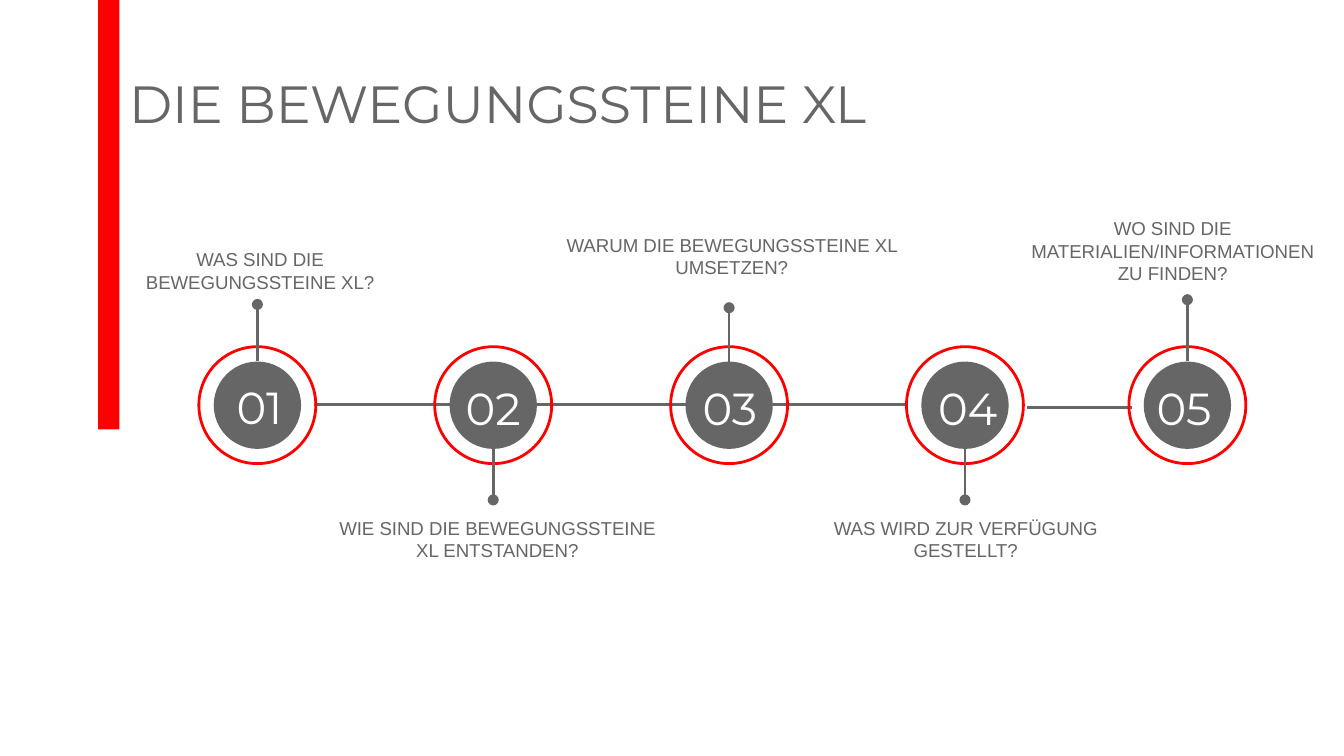
from lxml.etree import SubElement
from pptx import Presentation
from pptx.dml.color import RGBColor
from pptx.enum.shapes import MSO_CONNECTOR, MSO_SHAPE
from pptx.enum.text import MSO_ANCHOR, MSO_AUTO_SIZE, PP_ALIGN
from pptx.oxml.ns import qn
from pptx.util import Pt

PX = 4572
COLORS = {"gray": "666666", "red": "FF0000", "white": "FFFFFF"}
TITLE = "DIE BEWEGUNGSSTEINE XL"
STEPS = [
    {"number": "01", "question": "WAS SIND DIE BEWEGUNGSSTEINE XL?",
     "ring_left": 296, "number_at": (308, 530), "stem": (538, 453), "question_at": (190, 349, 394)},
    {"number": "02", "question": "WIE SIND DIE BEWEGUNGSSTEINE XL ENTSTANDEN?",
     "ring_left": 647, "number_at": (656, 532), "stem": (668, 744), "question_at": (481, 749, 518)},
    {"number": "03", "question": "WARUM DIE BEWEGUNGSSTEINE XL UMSETZEN?",
     "ring_left": 998, "number_at": (1008, 532), "stem": (542, 458), "question_at": (816, 328, 546)},
    {"number": "04", "question": "WAS WIRD ZUR VERFÜGUNG GESTELLT?",
     "ring_left": 1349, "number_at": (1362, 531), "stem": (668, 744), "question_at": (1216, 749, 442)},
    {"number": "05", "question": "WO SIND DIE MATERIALIEN/INFORMATIONEN ZU FINDEN?",
     "ring_left": 1680, "number_at": (1684, 532), "stem": (538, 446), "question_at": (1503, 303, 484)},
]
LINKS = [(468, 602, 1348), (1528, 607, 1684)]
RING_TOP, RING_SIZE, DISC_SIZE = 516, 174, 130
DISC_INSET = (RING_SIZE - DISC_SIZE) // 2
TEXT_HEIGHT, NUMBER_WIDTH, INSET = 150, 156, 20


def color(name):
    return RGBColor.from_string(COLORS[name])


def emu(*lengths):
    return [length * PX for length in lengths]


def add_figure(slide, kind, box, fill=None, outline=None):
    figure = slide.shapes.add_shape(kind, *emu(*box))
    figure.shadow.inherit = False
    if fill:
        figure.fill.solid()
        figure.fill.fore_color.rgb = color(fill)
    else:
        figure.fill.background()
    if outline:
        figure.line.color.rgb = color(outline)
        figure.line.width = Pt(1.5)
    else:
        figure.line.fill.background()


def add_line(slide, start, end, dot=False):
    line = slide.shapes.add_connector(MSO_CONNECTOR.STRAIGHT, *emu(*start, *end))
    line.line.color.rgb = color("gray")
    line.line.width = Pt(1.5)
    if dot:
        SubElement(line.line._get_or_add_ln(), qn("a:tailEnd"), type="oval")
    SubElement(line._element.spPr, qn("a:effectLst"))


def write(box, text, font, size, ink, anchor, align):
    frame = box.text_frame
    frame.text = text
    frame.word_wrap = True
    frame.auto_size = MSO_AUTO_SIZE.NONE
    frame.vertical_anchor = anchor
    frame.margin_left = frame.margin_right = INSET * PX
    frame.margin_top = frame.margin_bottom = INSET * PX
    paragraph = frame.paragraphs[0]
    paragraph.alignment = align
    paragraph.font.name = font
    paragraph.font.size = Pt(size)
    paragraph.font.color.rgb = color(ink)
    return paragraph


def add_step(slide, step):
    left = step["ring_left"]
    add_figure(slide, MSO_SHAPE.OVAL, (left, RING_TOP, RING_SIZE, RING_SIZE), outline="red")
    add_figure(slide, MSO_SHAPE.OVAL,
               (left + DISC_INSET, RING_TOP + DISC_INSET, DISC_SIZE, DISC_SIZE), fill="gray")
    center = left + RING_SIZE // 2
    stem_start, stem_end = step["stem"]
    add_line(slide, (center, stem_start), (center, stem_end), dot=True)

    number = slide.shapes.add_textbox(*emu(*step["number_at"], NUMBER_WIDTH, TEXT_HEIGHT))
    write(number, step["number"], "Montserrat", 24, "white", MSO_ANCHOR.MIDDLE, PP_ALIGN.CENTER)

    question = slide.shapes.add_textbox(*emu(*step["question_at"], TEXT_HEIGHT))
    paragraph = write(question, step["question"], "Arial", 10, "gray",
                      MSO_ANCHOR.TOP, PP_ALIGN.CENTER)
    paragraph.space_after = Pt(16)


def main():
    deck = Presentation()
    deck.slide_width, deck.slide_height = emu(2000, 1125)
    slide = deck.slides.add_slide(deck.slide_layouts[5])

    title = slide.shapes.title
    title.left, title.top, title.width, title.height = emu(172, 32, 1768, 188)
    write(title, TITLE, "Montserrat", 28, "gray", MSO_ANCHOR.BOTTOM, PP_ALIGN.LEFT)

    add_figure(slide, MSO_SHAPE.RECTANGLE, (146, -2, 32, 641), fill="red")
    for start, y, end in LINKS:
        add_line(slide, (start, y), (end, y))
    for step in STEPS:
        add_step(slide, step)

    deck.save("out.pptx")


if __name__ == "__main__":
    main()
